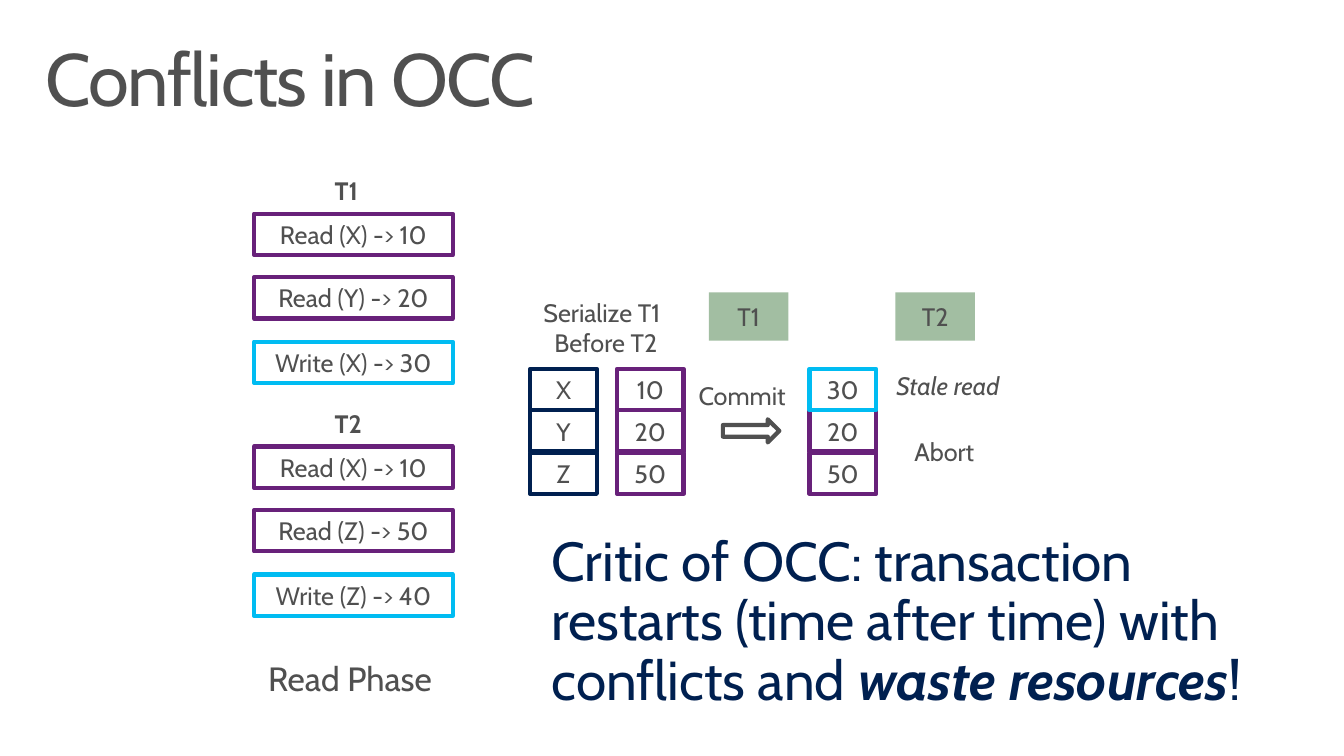
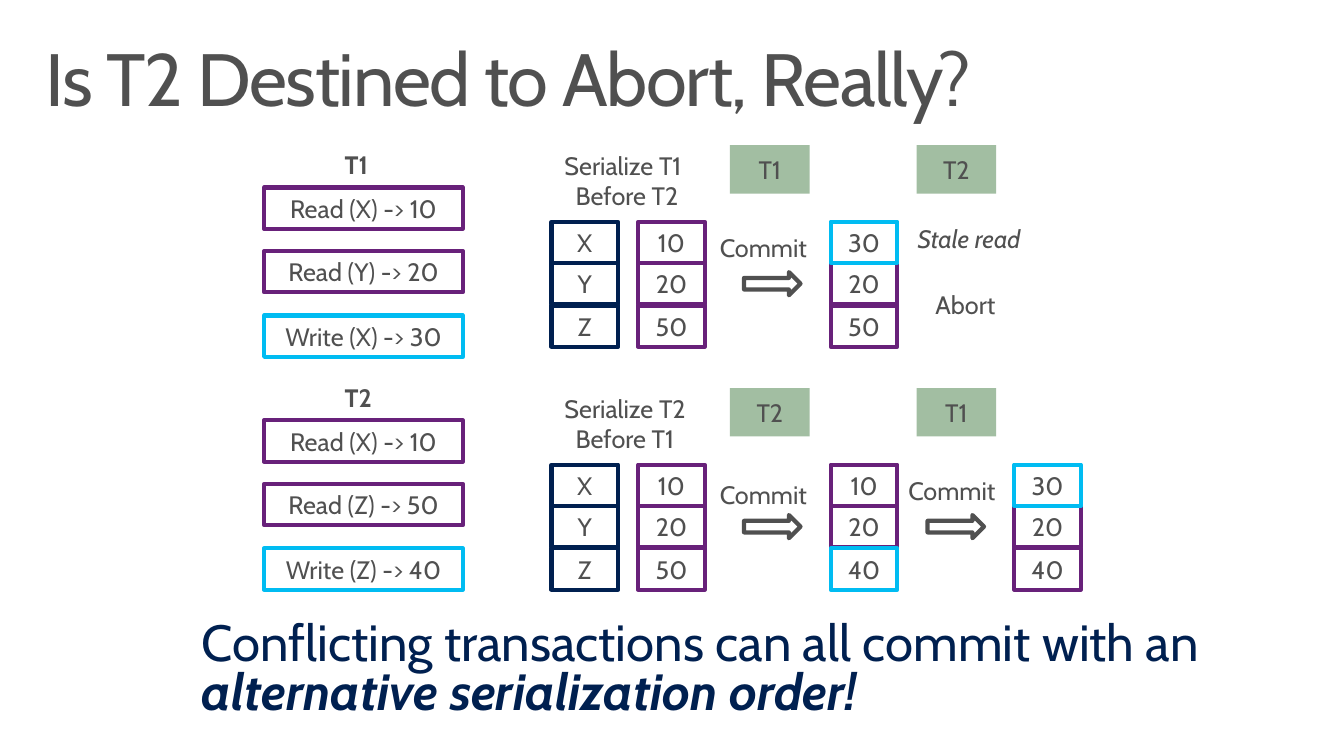
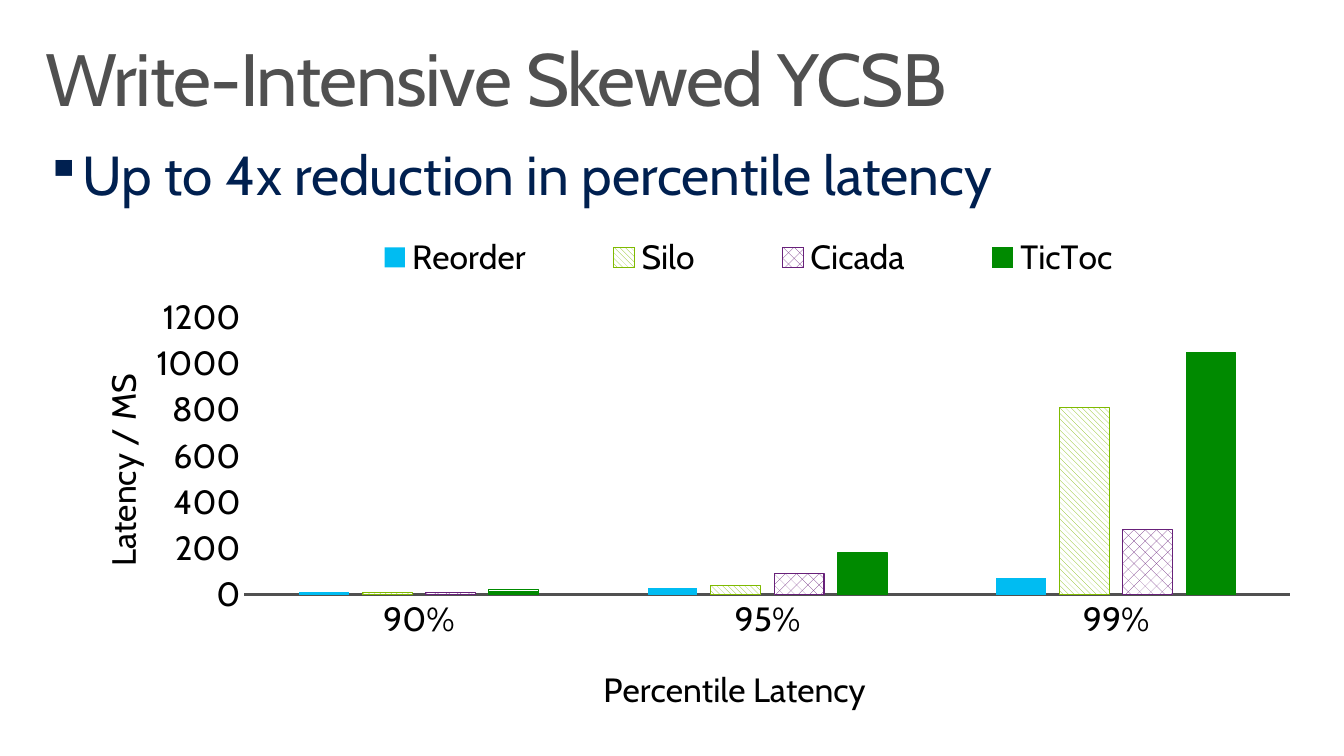
from lxml import etree
from pptx import Presentation
from pptx import util as u
from pptx.chart import data as chart_data
from pptx.dml.color import RGBColor
from pptx.enum import chart as ch, dml, shapes, text
from pptx.oxml import ns

# Style
PX = 9144  # EMU; 100 px make one inch
FONT = "Cabin"
WHITE = RGBColor(0xFF, 0xFF, 0xFF)
BLACK = RGBColor(0, 0, 0)
GREY = RGBColor(0x50, 0x50, 0x50)
NAVY = RGBColor(0x00, 0x20, 0x50)
PURPLE = RGBColor(0x68, 0x21, 0x7A)
CYAN = RGBColor(0x00, 0xBC, 0xF2)
SAGE = RGBColor(0xA2, 0xBE, 0xA2)
LIME = RGBColor(0x7F, 0xBA, 0x00)
GREEN = RGBColor(0x00, 0x8A, 0x00)

# Offsets within a serialization schedule
TAG_LEFTS = (177, 362)
STATE_LEFTS = (86, 277, 459)
ARROW_LEFTS = (191, 373)
COMMIT_LEFTS = (157, 344)


def add_xml(parent, tag, index=None, **attributes):
    element = etree.Element(ns.qn(tag), attributes)
    parent.insert(len(parent) if index is None else index, element)
    return element


def set_layout(parent, index, **fractions):
    """Place a chart part by fractions of the chart's size."""
    for old in parent.findall(ns.qn("c:layout")):
        parent.remove(old)
    layout = add_xml(parent, "c:layout", index)
    manual = add_xml(layout, "c:manualLayout")
    if "w" in fractions and parent.tag == ns.qn("c:plotArea"):
        add_xml(manual, "c:layoutTarget", val="inner")
    for side in ("x", "y"):
        add_xml(manual, f"c:{side}Mode", val="edge")
    for name, value in fractions.items():
        add_xml(manual, f"c:{name}", val=str(value))


class Deck:
    def __init__(self):
        self.deck = Presentation()
        self.deck.slide_width = u.Inches(13.33)
        self.deck.slide_height = u.Inches(7.5)
        self.page = None

    def style(self, font, size, color, bold=False, italic=False):
        font.name, font.size = FONT, u.Pt(size)
        font.color.rgb = color
        font.bold, font.italic = bold, italic

    def new_page(self, title):
        self.page = self.deck.slides.add_slide(self.deck.slide_layouts[6])
        para = self.text(29, 32, 1275, 98, [title], 52.9, inset=(16, 10), spacing=0.9)
        para.runs[0].font._element.set("spc", "-100")

    def text(self, left, top, width, height, lines, size=18, inset=(10, 5),
             spacing=None, **look):
        box = self.page.shapes.add_textbox(left * PX, top * PX, width * PX, height * PX)
        frame = box.text_frame
        frame.word_wrap = True
        frame.margin_left = frame.margin_right = inset[0] * PX
        frame.margin_top = frame.margin_bottom = inset[1] * PX
        frame.text = "\n".join(lines)
        for para in frame.paragraphs:
            para.line_spacing = spacing
            for span in para.runs:
                self.style(span.font, size, GREY, **look)
        return frame.paragraphs[-1]

    def body(self, left, top, width, height, plain, strong="", end="", size=39.2,
             spacing=None):
        para = self.text(left, top, width, height, [plain], size, (16, 10), spacing)
        for part in (strong, end):
            if part:
                para.add_run().text = part
        for span in para.runs:
            stressed = span.text == strong
            self.style(span.font, size, NAVY, stressed, stressed)
        return para

    def shape(self, left, top, width, height, fill=WHITE, line=None, label="",
              kind=shapes.MSO_SHAPE.RECTANGLE):
        box = self.page.shapes.add_shape(kind, left * PX, top * PX, width * PX, height * PX)
        box.shadow.inherit = False
        box.fill.solid()
        box.fill.fore_color.rgb = fill
        if line is None:
            box.line.fill.background()
        else:
            box.line.color.rgb = line
            box.line.width = u.Pt(3)
        if label:
            frame = box.text_frame
            frame.vertical_anchor = text.MSO_ANCHOR.MIDDLE
            frame.text = label
            para = frame.paragraphs[0]
            para.alignment = text.PP_ALIGN.CENTER
            self.style(para.runs[0].font, 18, GREY)

    def transaction(self, left, top, name, steps):
        self.text(left + 70, top, 49, 40, [name], bold=True)
        for i, step in enumerate(steps):
            line = CYAN if step.startswith("Write") else PURPLE
            self.shape(left, top + 43 + i * 127 // 2, 197, 41, line=line, label=step)

    def transactions(self, left, top):
        self.transaction(left, top, "T1",
                         ("Read (X) -> 10", "Read (Y) -> 20", "Write (X) -> 30"))
        self.transaction(left, top + 231, "T2",
                         ("Read (X) -> 10", "Read (Z) -> 50", "Write (Z) -> 40"))

    def column(self, left, top, labels, line, written=None):
        # The written cell comes last so that its outline stays on top
        for i in sorted(range(len(labels)), key=lambda row: row == written):
            self.shape(left, top + i * 83 // 2, 66, 41,
                       line=CYAN if i == written else line, label=labels[i])

    def schedule(self, left, top, order, states, commit_tops=(82, 82)):
        """Each state is its three values and the row just written."""
        first, second = order
        para = self.text(left + 3, top, 145, 71, [f"Serialize {first}", f"Before {second}"])
        para._p.get_or_add_pPr().set("marL", str(11 * PX))
        for offset, name in zip(TAG_LEFTS, order):
            self.shape(left + offset, top, 79, 48, fill=SAGE, label=name)
        self.column(left, top + 76, "XYZ", NAVY)
        for offset, (values, written) in zip(STATE_LEFTS, states):
            self.column(left + offset, top + 76, values, PURPLE, written)
        for i in range(len(states) - 1):
            self.shape(left + ARROW_LEFTS[i], top + 126, 56, 23, line=GREY,
                       kind=shapes.MSO_SHAPE.RIGHT_ARROW)
            self.text(left + COMMIT_LEFTS[i], top + commit_tops[i], 109, 40, ["Commit"])

    def aborted_schedule(self, left, top):
        self.schedule(left, top, ("T1", "T2"),
                      [(("10", "20", "50"), None), (("30", "20", "50"), 0)])
        self.text(left + 371, top + 138, 84, 40, ["Abort"])
        self.text(left + 343, top + 67, 149, 60, ["Stale read"], inset=(20, 16),
                  spacing=0.9, italic=True)

    def axis(self, axis, title, x, y):
        axis.has_major_gridlines = False
        axis.major_tick_mark = axis.minor_tick_mark = ch.XL_TICK_MARK.NONE
        self.style(axis.tick_labels.font, 24, BLACK)
        frame = axis.axis_title.text_frame
        frame.text = title
        self.style(frame.paragraphs[0].runs[0].font, 24, BLACK)
        set_layout(axis.axis_title._element, 1, x=x, y=y)

    def latency_chart(self, left, top, width, height, categories, series_rows):
        data = chart_data.CategoryChartData()
        data.categories = categories
        data.categories.number_format = "0%"
        for name, values, _, _ in series_rows:
            data.add_series(name, values)
        chart = self.page.shapes.add_chart(
            ch.XL_CHART_TYPE.COLUMN_CLUSTERED,
            left * PX, top * PX, width * PX, height * PX, data).chart
        chart.has_title = False
        self.style(chart.font, 24, BLACK)

        # Columns
        plot = chart.plots[0]
        plot.gap_width, plot.overlap = 219, -27
        plot.vary_by_categories = False
        for series, (_, _, color, pattern) in zip(plot.series, series_rows):
            fill = series.format.fill
            if pattern is None:
                fill.solid()
                fill.fore_color.rgb = color
                continue
            fill.patterned()
            fill.pattern = pattern
            fill.fore_color.rgb, fill.back_color.rgb = color, WHITE
            series.format.line.color.rgb = color
            series.format.line.width = u.Pt(0.75)

        # Axes
        self.axis(chart.category_axis, "Percentile Latency", 0.43, 0.87)
        chart.category_axis.tick_labels.number_format = "0%"
        chart.category_axis.tick_labels.number_format_is_linked = False
        chart.category_axis.format.line.color.rgb = GREY
        chart.category_axis.format.line.width = u.Pt(2)
        self.axis(chart.value_axis, "Latency / MS", 0.03, 0.29)
        chart.value_axis.minimum_scale = 0
        chart.value_axis.maximum_scale = 1200
        chart.value_axis.major_unit = 200
        chart.value_axis.format.line.fill.background()

        # Legend and plot area
        chart.has_legend = True
        chart.legend.position = ch.XL_LEGEND_POSITION.TOP
        chart.legend.include_in_layout = False
        self.style(chart.legend.font, 24, BLACK)
        set_layout(chart.legend._element, 1, x=0.2, y=0.03, w=0.7, h=0.08)
        plot_area = chart._chartSpace.find(".//" + ns.qn("c:plotArea"))
        set_layout(plot_area, 0, x=0.15, y=0.19, w=0.83, h=0.55)


def main():
    deck = Deck()

    # Conflicts
    deck.new_page("Conflicts in OCC")
    deck.body(531, 520, 791, 213,
              "Critic of OCC: transaction restarts (time after time) with conflicts and ",
              "waste resources", "!", spacing=0.9)
    deck.transactions(252, 169)
    deck.text(246, 641, 210, 69, ["Read Phase"], 24, inset=(20, 16), spacing=0.9)
    deck.aborted_schedule(526, 290)

    # Alternative order
    deck.new_page("Is T2 Destined to Abort, Really?")
    deck.body(184, 608, 1043, 127,
              "Conflicting transactions can all commit with an ",
              "alternative serialization order!", size=36.3, spacing=0.8)
    deck.transactions(262, 143)
    deck.aborted_schedule(547, 144)
    deck.schedule(547, 385, ("T2", "T1"),
                  [(("10", "20", "50"), None), (("10", "20", "40"), 2),
                   (("30", "20", "40"), 0)], commit_tops=(86, 82))

    # Latency results
    deck.new_page("Write-Intensive Skewed YCSB")
    para = deck.body(29, 130, 1274, 260, "Up to 4x reduction in percentile latency")
    properties = para._p.get_or_add_pPr()
    properties.set("marL", str(37 * PX))
    properties.set("indent", str(-37 * PX))
    bullet_color = add_xml(properties, "a:buClr")
    add_xml(bullet_color, "a:srgbClr", val=str(NAVY))
    add_xml(properties, "a:buSzPct", val="90000")
    add_xml(properties, "a:buChar", char="▪")
    pattern = dml.MSO_PATTERN
    deck.latency_chart(55, 220, 1250, 500, (0.9, 0.95, 0.99), (
        ("Reorder", (10, 30, 70), CYAN, None),
        ("Silo", (10, 40, 810), LIME, pattern.WIDE_DOWNWARD_DIAGONAL),
        ("Cicada", (10, 90, 280), PURPLE, pattern.PERCENT_25),
        ("TicToc", (20, 180, 1050), GREEN, pattern.DARK_HORIZONTAL)))

    deck.deck.save("out.pptx")


if __name__ == "__main__":
    main()
